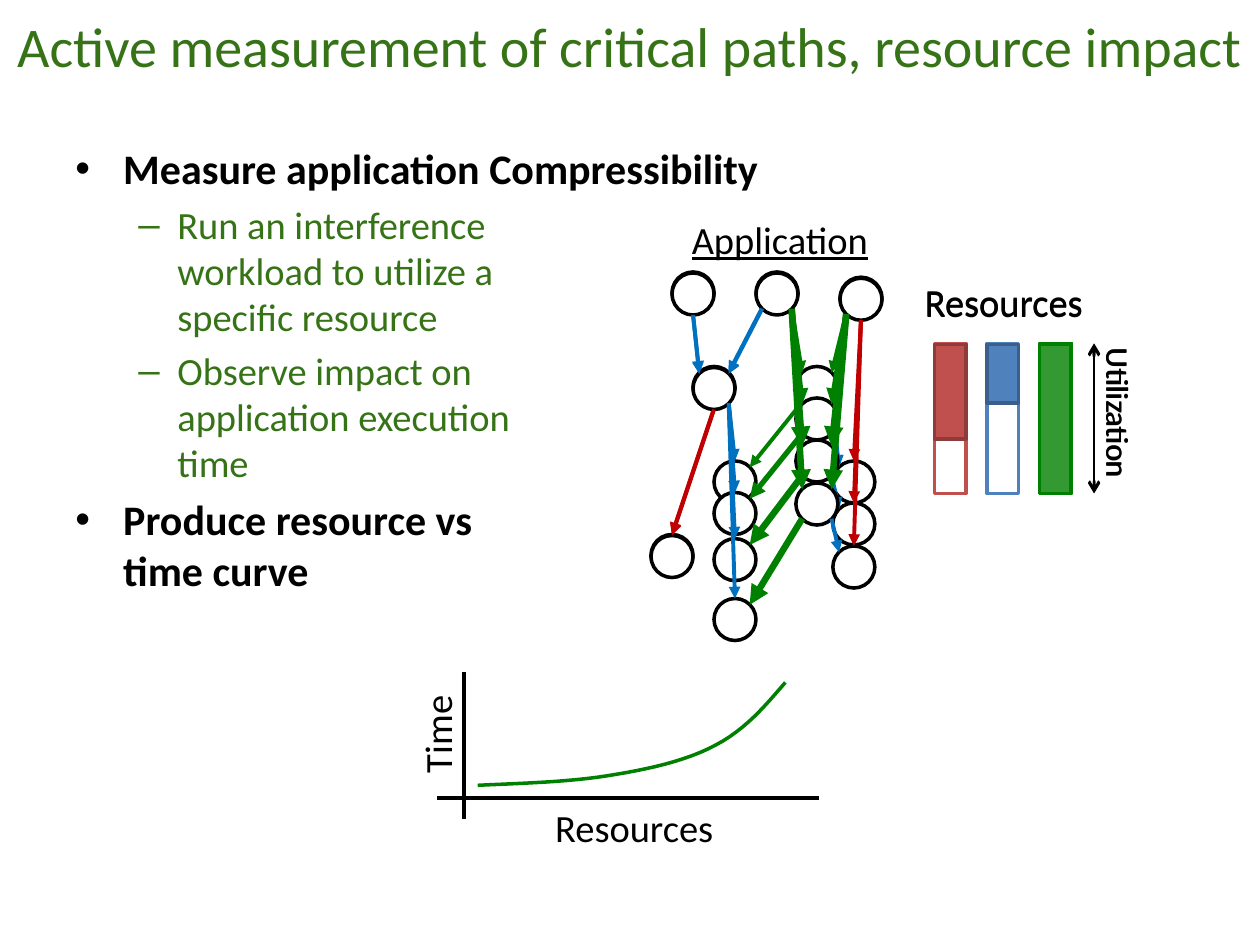
from lxml.etree import SubElement
from pptx import Presentation
from pptx.dml.color import RGBColor
from pptx.enum.shapes import MSO_CONNECTOR, MSO_SHAPE
from pptx.enum.text import MSO_ANCHOR, MSO_AUTO_SIZE, PP_ALIGN
from pptx.oxml.ns import qn
from pptx.util import Inches, Pt

FONT = "Calibri"
CELL = 1 / 6
COLORS = {
    "title": "367317", "black": "000000", "white": "FFFFFF",
    "red": "C00000", "blue": "0070C0", "green": "008000",
    "red bar": "C0504D", "red edge": "8E3B39",
    "blue bar": "4F81BD", "blue edge": "3A5F8C", "green bar": "339933",
}
TITLE = "Active measurement of critical paths, resource impact"
BODY = [
    (0, "Measure application Compressibility"),
    (1, "Run an interference\vworkload to utilize a\vspecific resource"),
    (1, "Observe impact on\vapplication execution\vtime"),
    (0, "Produce resource vs\vtime curve"),
]
LEVELS = [
    {"bullet": "•", "margin": 0.38, "hanging": 0.38, "size": 24, "color": "black"},
    {"bullet": "–", "margin": 0.81, "hanging": 0.31, "size": 22, "color": "title"},
]

NODE_SIZE = 2
FIXED_NODES = {
    "first": (32, 13), "second": (36, 13), "third": (40, 13.25),
    "joined": (33, 17.5), "end": (31, 25.5),
}
MOVING_COLUMNS = {"left": 34, "middle": 37.9, "right": 39.66}
PORTS = {
    "top": (1, 0), "bottom": (1, 2), "top left": (0.3, 0.3), "top right": (1.7, 0.3),
    "bottom left": (0.3, 1.7), "bottom right": (1.7, 1.7),
}
EDGES = [
    ("first", "bottom", "joined", "top left", "blue"),
    ("second", "bottom left", "joined", "top right", "blue"),
    ("second", "bottom right", "middle", "top left", "green"),
    ("third", "bottom left", "middle", "top right", "green"),
    ("third", "bottom", "right", "top", "red"),
    ("joined", "bottom", "end", "top", "red"),
    ("joined", "bottom right", "left", "top", "blue"),
    ("middle", "bottom left", "left", "top right", "green"),
    ("middle", "bottom right", "right", "top left", "blue"),
]
MOVING = ["left", "middle", "right"]
EVERYTHING = MOVING + list(FIXED_NODES)
STAGES = [
    {"rows": (22, 17.5, 22), "nodes": ["left", "middle"], "width": 2.25, "bar": 1.15, "shift": -0.05},
    {"rows": (23.5, 19, 22), "nodes": MOVING, "width": 3, "bar": 2.3, "shift": -0.05},
    {"rows": (25.7, 21, 24), "nodes": EVERYTHING, "width": 3.75, "bar": 4.6, "shift": -0.05},
    {"rows": (28.5, 23, 26), "nodes": EVERYTHING, "width": 3.75, "bar": 7.1, "shift": 0},
]
BAR_COLUMNS = {"red bar": 44.5, "blue bar": 47, "green": 49.5}
BAR_TOP, BAR_WIDTH, BAR_HEIGHT = 16.4, 1.5, 7.1
CURVE_START = (22.75, 37.4)
CURVE = [
    ((24.85, 37.3), (27, 37.25), (28.9, 36.95)),
    ((30.8, 36.65), (32.65, 36.25), (34.05, 35.5)),
    ((35.5, 34.75), (36.45, 33.6), (37.4, 32.5)),
]


def grid(*cells):
    return [Inches(cell * CELL) for cell in cells]


def color(name):
    return RGBColor.from_string(COLORS[name])


def style_font(paragraph, size, name):
    for run in paragraph.runs:
        run.font.name, run.font.size = FONT, Pt(size)
        run.font.color.rgb = color(name)


def add_box(shapes, kind, box, fill, line):
    shape = shapes.add_shape(kind, *grid(*box))
    shape.shadow.inherit = False
    shape.fill.solid()
    shape.fill.fore_color.rgb = color(fill)
    shape.line.color.rgb = color(line)
    shape.line.width = Pt(2)


def add_line(shapes, start, end, name, width, head=None, tail=None):
    connector = shapes.add_connector(MSO_CONNECTOR.STRAIGHT, *grid(*start, *end))
    connector.line.color.rgb = color(name)
    connector.line.width = Pt(width)
    outline = connector.line._get_or_add_ln()
    for tag, arrow in (("a:headEnd", head), ("a:tailEnd", tail)):
        if arrow:
            SubElement(outline, qn(tag), type=arrow)
    SubElement(connector._element.spPr, qn("a:effectLst"))


def add_label(shapes, text, box, size=22, rotation=0, underline=False):
    label = shapes.add_textbox(*grid(*box))
    label.rotation = rotation
    frame = label.text_frame
    frame.text = text
    frame.word_wrap = False
    frame.auto_size = MSO_AUTO_SIZE.SHAPE_TO_FIT_TEXT
    style_font(frame.paragraphs[0], size, "black")
    if underline:
        frame.paragraphs[0].runs[0].font.underline = True


def add_title(slide):
    frame = slide.shapes.add_textbox(*grid(0, -1, 60, 6.3)).text_frame
    frame.word_wrap = True
    frame.vertical_anchor = MSO_ANCHOR.MIDDLE
    frame.text = TITLE
    frame.paragraphs[0].alignment = PP_ALIGN.CENTER
    style_font(frame.paragraphs[0], 32, "title")


def add_body(slide):
    frame = slide.shapes.add_textbox(*grid(3, 6.5, 54, 31)).text_frame
    frame.word_wrap = True
    for index, (level, text) in enumerate(BODY):
        paragraph = frame.add_paragraph() if index else frame.paragraphs[0]
        look = LEVELS[level]
        paragraph.text = text
        paragraph.level = level
        if index:
            paragraph.space_before = Pt(look["size"] * 0.2)
        properties = paragraph._p.get_or_add_pPr()
        properties.set("marL", str(Inches(look["margin"])))
        properties.set("indent", str(-Inches(look["hanging"])))
        SubElement(properties, qn("a:buFont"), typeface="Arial")
        SubElement(properties, qn("a:buChar"), char=look["bullet"])
        style_font(paragraph, look["size"], look["color"])
        for run in paragraph.runs:
            run.font.bold = level == 0


def add_stage(slide, stage):
    shapes = slide.shapes.add_group_shape().shapes
    shift = stage["shift"]
    nodes = FIXED_NODES | dict(zip(MOVING, zip(MOVING_COLUMNS.values(), stage["rows"])))
    nodes = {name: (left, top + shift) for name, (left, top) in nodes.items()}
    shown = stage["nodes"]
    complete = shown == EVERYTHING
    bar_top = BAR_TOP + shift
    for name in shown:
        add_box(shapes, MSO_SHAPE.OVAL, (*nodes[name], NODE_SIZE, NODE_SIZE), "white", "black")
    for source, exit_port, target, entry_port, name in EDGES:
        if (target in ("joined", "end") and not complete) or (name == "red" and "right" not in shown):
            continue
        start, end = [
            [place + offset for place, offset in zip(nodes[node], PORTS[port])]
            for node, port in ((source, exit_port), (target, entry_port))
        ]
        width = stage["width"] if name == "green" else 2.25
        add_line(shapes, start, end, name, width, tail="triangle")
    if complete:
        for name, left in BAR_COLUMNS.items():
            add_box(shapes, MSO_SHAPE.RECTANGLE, (left, bar_top, BAR_WIDTH, BAR_HEIGHT), "white", name)
        add_label(shapes, "Resources", (43.45, 13 + shift, 8.8, 2.8))
        add_label(shapes, "Utilization", (49.55, 18.55 + shift, 7.45, 2.4), 18, 90)
        add_line(shapes, (52.1, bar_top), (52.1, bar_top + BAR_HEIGHT), "black", 1.5, "arrow", "arrow")
    add_box(shapes, MSO_SHAPE.RECTANGLE,
            (BAR_COLUMNS["green"], bar_top, BAR_WIDTH, stage["bar"]), "green bar", "green")


def add_curve(shapes, steps=12):
    points, start = [], CURVE_START
    for first, second, end in CURVE:
        for step in range(1, steps + 1):
            t = step / steps
            weights = ((1 - t) ** 3, 3 * t * (1 - t) ** 2, 3 * t * t * (1 - t), t ** 3)
            corners = zip(start, first, second, end)
            points.append(grid(*(sum(w * c for w, c in zip(weights, axis)) for axis in corners)))
        start = end
    builder = shapes.build_freeform(*grid(*CURVE_START))
    builder.add_line_segments(points, close=False)
    curve = builder.convert_to_shape()
    curve.shadow.inherit = False
    curve.fill.background()
    curve.line.color.rgb = color("green")
    curve.line.width = Pt(2)


def main():
    presentation = Presentation()
    presentation.slide_width, presentation.slide_height = grid(60, 45)
    slide = presentation.slides.add_slide(presentation.slide_layouts[6])
    add_title(slide)
    add_body(slide)
    for stage in STAGES:
        add_stage(slide, stage)
    for name, edge, height in (("blue bar", "blue edge", 2.8), ("red bar", "red edge", 4.5)):
        add_box(slide.shapes, MSO_SHAPE.RECTANGLE,
                (BAR_COLUMNS[name], BAR_TOP, BAR_WIDTH, height), name, edge)
    add_label(slide.shapes, "Application", (32.35, 10, 9.65, 2.8), underline=True)
    add_label(slide.shapes, "Resources", (25.85, 38, 8.8, 2.8))
    add_label(slide.shapes, "Time", (18.35, 33.55, 4.9, 2.8), rotation=270)
    plot = slide.shapes.add_group_shape().shapes
    add_line(plot, (22.1, 32), (22.1, 39), "black", 2.25)
    add_line(plot, (20.8, 38), (39, 38), "black", 2.25)
    add_curve(plot)
    presentation.save("out.pptx")


if __name__ == "__main__":
    main()
